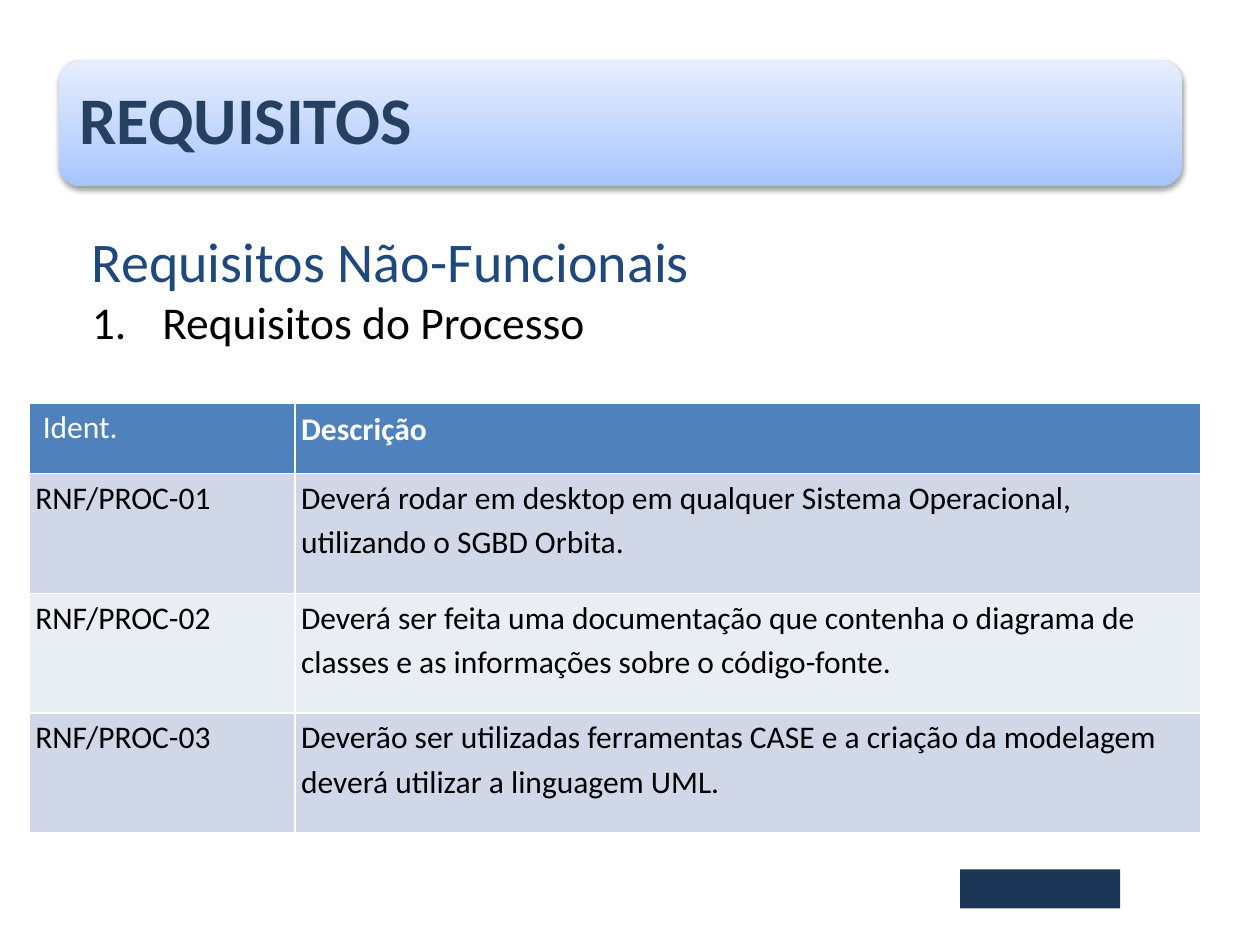
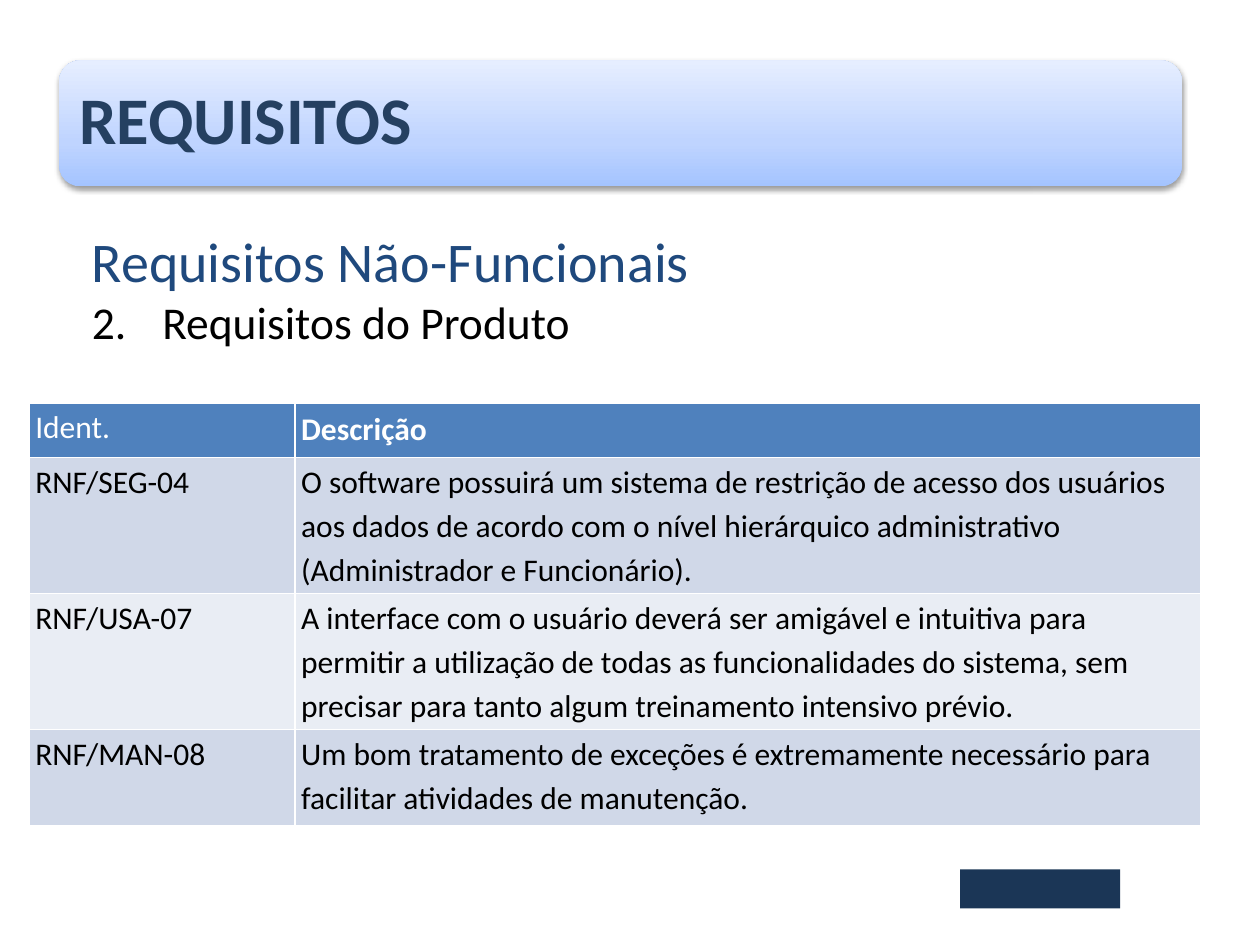
from lxml import etree
from pptx import Presentation
from pptx import util as u
from pptx.dml.color import RGBColor
from pptx.enum import shapes, text
from pptx.oxml.ns import qn

TITLE_COLOUR = "254061"
HEADING_COLOUR = "1F497D"
ACCENT = "4F81BD"
FOOTER_COLOUR = "1B3656"
WHITE, BLACK = "FFFFFF", "000000"
ROW_FILLS = ("D0D8E8", "E9EDF4")
BAND_STOPS = ((0, "A4C4FF"), (35, "BFD4FF"), (100, "E6EEFF"))
BAND_BOX = (0.47, 0.48, 8.91, 1)
HEADING_BOX = (0.5, 1.75, 9, 1.37)
FOOTER_BOX = (7.62, 6.9, 1.27, 0.31)
TABLE_ORIGIN = (0.23, 3.2)
COLUMN_WIDTHS = (2.11, 7.19)


def colour(hex_text):
    """Return the colour for a hex string."""
    return RGBColor.from_string(hex_text)


def inches(values):
    """Convert a sequence of numbers to lengths."""
    return [u.Inches(value) for value in values]


def add_element(parent, tag, **attributes):
    """Append a drawing element with the given attributes."""
    values = {name: str(value) for name, value in attributes.items()}
    return etree.SubElement(parent, qn(f"a:{tag}"), values)


def add_text(paragraph, content, size=18, color=BLACK, bold=False,
             font="Calibri", spacing=None, after=0):
    """Add a formatted run and set the spacing of its paragraph."""
    run = paragraph.add_run()
    run.text = content
    run.font.size = u.Pt(size)
    run.font.bold = bold
    run.font.name = font
    run.font.color.rgb = colour(color)
    paragraph.space_before = u.Pt(0)
    paragraph.space_after = u.Pt(after)
    if spacing:
        paragraph.line_spacing = spacing


def set_indent(paragraph, left, hanging):
    """Give a paragraph a left margin and a hanging first line."""
    properties = paragraph._p.get_or_add_pPr()
    properties.set("marL", str(u.Inches(left)))
    properties.set("indent", str(-u.Inches(hanging)))
    return properties


def add_band(slide, box):
    """Draw the shaded rounded band behind the title."""
    band = slide.shapes.add_shape(shapes.MSO_SHAPE.ROUNDED_RECTANGLE, *inches(box))
    band.line.fill.background()
    properties = band._element.spPr
    gradient = etree.Element(qn("a:gradFill"), rotWithShape="1")
    stops = add_element(gradient, "gsLst")
    for position, stop_colour in BAND_STOPS:
        stop = add_element(stops, "gs", pos=position * 1000)
        add_element(stop, "srgbClr", val=stop_colour)
    add_element(gradient, "lin", ang=270 * 60000, scaled=0)
    properties.find(qn("a:prstGeom")).addnext(gradient)
    effects = add_element(properties, "effectLst")
    shadow = add_element(effects, "outerShdw", blurRad=u.Pt(3.1), dist=u.Pt(1.6),
                         dir=90 * 60000, rotWithShape=0)
    shadow_colour = add_element(shadow, "srgbClr", val=BLACK)
    add_element(shadow_colour, "alpha", val=38000)
    slide.shapes.title._element.addprevious(band._element)


def add_title(slide, content, box):
    """Place the title over its band."""
    title = slide.shapes.title
    title.left, title.top, title.width, title.height = inches(box)
    frame = title.text_frame
    frame.auto_size = text.MSO_AUTO_SIZE.NONE
    frame.vertical_anchor = text.MSO_ANCHOR.MIDDLE
    frame.margin_left = frame.margin_right = u.Inches(0.16)
    frame.margin_top = frame.margin_bottom = u.Inches(0.16)
    paragraph = frame.paragraphs[0]
    paragraph.alignment = text.PP_ALIGN.LEFT
    add_text(paragraph, content, size=38, color=TITLE_COLOUR, bold=True, spacing=0.9)
    add_band(slide, box)


def add_heading(slide, heading, number, topic, box):
    """Write the heading and the numbered topic below it."""
    frame = slide.shapes.add_textbox(*inches(box)).text_frame
    frame.word_wrap = True
    first = frame.paragraphs[0]
    set_indent(first, 0.48, 0.35)
    add_text(first, heading, size=32, color=HEADING_COLOUR)
    second = frame.add_paragraph()
    properties = set_indent(second, 0.69, 0.56)
    add_element(properties, "buFont", typeface="+mj-lt")
    add_element(properties, "buAutoNum", type="arabicPeriod", startAt=number)
    add_text(second, topic, size=26)


def add_footer(slide, box):
    """Draw the plain footer bar."""
    bar = slide.shapes.add_shape(shapes.MSO_SHAPE.RECTANGLE, *inches(box))
    bar.shadow.inherit = False
    bar.fill.solid()
    bar.fill.fore_color.rgb = colour(FOOTER_COLOUR)
    bar.line.fill.background()


def fill_cell(cell, content, fill, left=0.05, **text_format):
    """Set the margins, fill and text of a table cell."""
    cell.margin_left, cell.margin_right = inches((left, 0.05))
    cell.margin_top = cell.margin_bottom = 0
    cell.fill.solid()
    cell.fill.fore_color.rgb = colour(fill)
    add_text(cell.text_frame.paragraphs[0], content, **text_format)


def add_requirements(slide, requirements, row_heights, ident_margin, origin):
    """Build the table of requirement codes and descriptions."""
    box = (*origin, sum(COLUMN_WIDTHS), sum(row_heights))
    table = slide.shapes.add_table(len(row_heights), 2, *inches(box)).table
    for column, width in zip(table.columns, COLUMN_WIDTHS):
        column.width = u.Inches(width)
    for row, height in zip(table.rows, row_heights):
        row.height = u.Inches(height)
    fill_cell(table.cell(0, 0), "Ident.", ACCENT, left=ident_margin,
              color=WHITE, spacing=1.15, after=10)
    fill_cell(table.cell(0, 1), "Descrição", ACCENT,
              color=WHITE, bold=True, spacing=1.2, after=3)
    for index, requirement in enumerate(requirements):
        for column, content in enumerate(requirement):
            fill_cell(table.cell(index + 1, column), content, ROW_FILLS[index % 2],
                      spacing=1.15, after=10)


def add_requirements_slide(presentation, number, topic, requirements, row_heights,
                           ident_margin=0.05):
    """Add one slide of non-functional requirements."""
    slide = presentation.slides.add_slide(presentation.slide_layouts[5])
    add_footer(slide, FOOTER_BOX)
    add_title(slide, "REQUISITOS", BAND_BOX)
    add_heading(slide, "Requisitos Não-Funcionais", number, topic, HEADING_BOX)
    add_requirements(slide, requirements, row_heights, ident_margin, TABLE_ORIGIN)


def main():
    """Build and save the presentation."""
    presentation = Presentation()
    presentation.slide_width, presentation.slide_height = inches((10, 7.5))
    process = (
        ("RNF/PROC-01", "Deverá rodar em desktop em qualquer Sistema Operacional, "
                        "utilizando o SGBD Orbita."),
        ("RNF/PROC-02", "Deverá ser feita uma documentação que contenha o diagrama de "
                        "classes e as informações sobre o código-fonte."),
        ("RNF/PROC-03", "Deverão ser utilizadas ferramentas CASE e a criação da modelagem "
                        "deverá utilizar a linguagem UML."),
    )
    product = (
        ("RNF/SEG-04", "O software possuirá um sistema de restrição de acesso dos usuários "
                       "aos dados de acordo com o nível hierárquico administrativo "
                       "(Administrador e Funcionário)."),
        ("RNF/USA-07", "A interface com o usuário deverá ser amigável e intuitiva para "
                       "permitir a utilização de todas as funcionalidades do sistema, sem "
                       "precisar para tanto algum treinamento intensivo prévio."),
        ("RNF/MAN-08", "Um bom tratamento de exceções é extremamente necessário para "
                       "facilitar atividades de manutenção."),
    )
    add_requirements_slide(presentation, 1, "Requisitos do Processo", process,
                           (0.56, 0.95, 0.95, 0.95), ident_margin=0.11)
    add_requirements_slide(presentation, 2, "Requisitos do Produto", product,
                           (0.43, 1.08, 1.08, 0.76))
    presentation.save("out.pptx")


if __name__ == "__main__":
    main()
